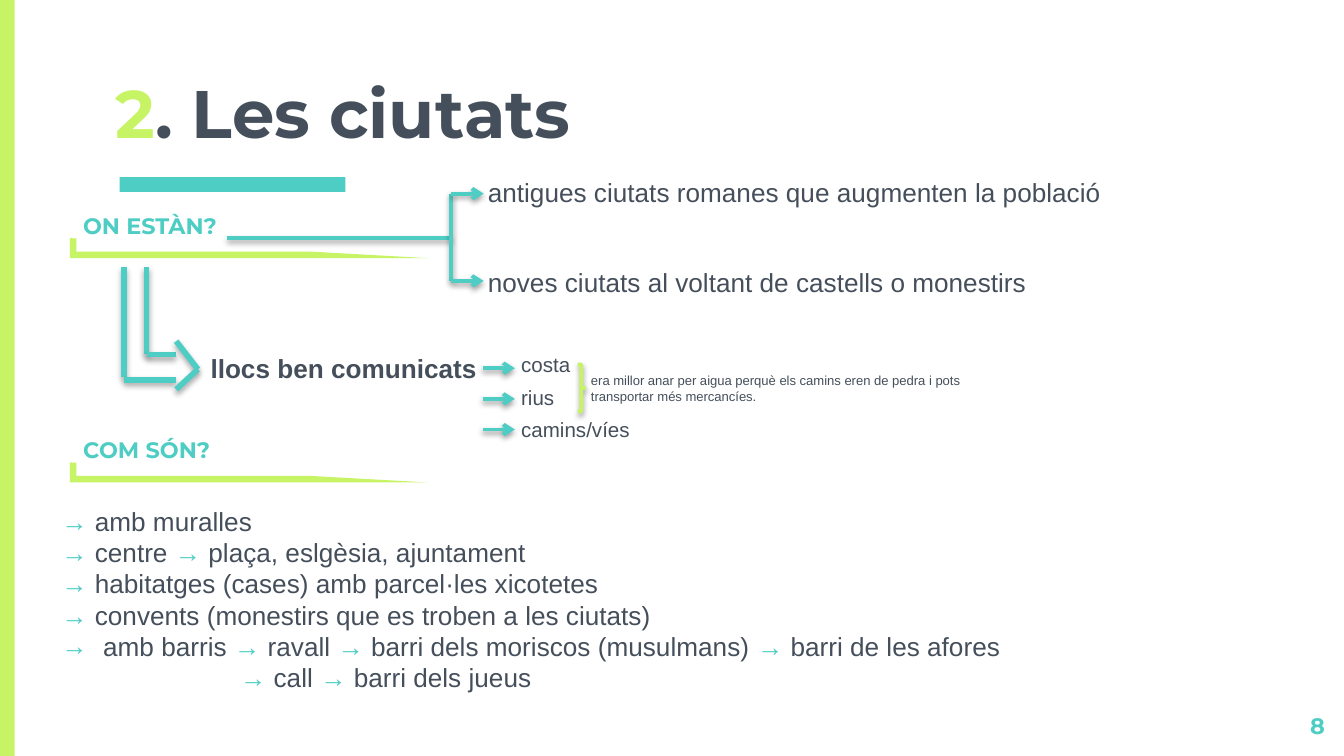
import pptx
import pptx.dml.color
import pptx.enum.shapes
import pptx.enum.text
import pptx.oxml
import pptx.oxml.ns
import pptx.util

Cm = pptx.util.Cm
Pt = pptx.util.Pt
SHAPE = pptx.enum.shapes.MSO_SHAPE
ALIGN = pptx.enum.text.PP_ALIGN
FIT = pptx.enum.text.MSO_AUTO_SIZE
LIME, TEAL, SLATE = "C7F464", "4ECDC4", "454F5B"
ARROW = "→ "


def paint(target, colour):
    """Give a fill or font colour object a solid hex colour."""
    target.rgb = pptx.dml.color.RGBColor.from_string(colour)


def add_child(parent, tag, **attributes):
    """Append a DrawingML element with its attributes."""
    child = pptx.oxml.ns.qn(f"a:{tag}")
    element = parent.makeelement(child, {name: str(value) for name, value in attributes.items()})
    parent.append(element)
    return element


def add_shadow(shape, alpha=38, distance=1.6):
    """Give a shape or connector a soft shadow straight below it."""
    properties = shape._element.spPr
    effects = properties.find(pptx.oxml.ns.qn("a:effectLst"))
    if effects is None:
        effects = add_child(properties, "effectLst")
    shadow = add_child(effects, "outerShdw", blurRad=Pt(3.1), dist=Pt(distance),
                       dir=5400000, rotWithShape=0)
    black = add_child(shadow, "srgbClr", val="000000")
    add_child(black, "alpha", val=alpha * 1000)


def style_span(span, size, colour, font="Arial", bold=False):
    """Format one run."""
    span.font.size = Pt(size)
    span.font.name = font
    span.font.bold = bold
    paint(span.font.color, colour)


def add_text(page, box, text, size, colour=SLATE, font="Arial", bold=False,
             wrap=False, inset=0.13, fit=FIT.SHAPE_TO_FIT_TEXT):
    """Place a one-paragraph text box and return its paragraph."""
    frame = page.shapes.add_textbox(*map(Cm, box)).text_frame
    frame.word_wrap = wrap
    frame.auto_size = fit
    frame.margin_top = frame.margin_bottom = Cm(inset)
    frame.text = text
    para = frame.paragraphs[0]
    style_span(para.runs[0], size, colour, font, bold)
    return para


def add_label(page, box, text):
    """Place a small bold teal label."""
    return add_text(page, box, text, 12, TEAL, "Montserrat", True, True, 0.25, FIT.NONE)


def add_shape(page, kind, box, colour):
    """Place a flat filled shape."""
    shape = page.shapes.add_shape(kind, *map(Cm, box))
    shape.shadow.inherit = False
    shape.fill.solid()
    paint(shape.fill.fore_color, colour)
    shape.line.fill.background()
    return shape


def add_line(page, start, end, width=2, head=False, **shadow):
    """Draw a teal line, with an arrowhead at its end when asked."""
    line = page.shapes.add_connector(pptx.enum.shapes.MSO_CONNECTOR.STRAIGHT,
                                     *map(Cm, start + end))
    line.line.width = Pt(width)
    paint(line.line.color, TEAL)
    if head:
        add_child(line.line._get_or_add_ln(), "tailEnd", type="arrow")
    add_shadow(line, **shadow)


def add_title(page, box):
    """Format the title and its coloured number."""
    title = page.shapes.title
    title.left, title.top, title.width, title.height = map(Cm, box)
    frame = title.text_frame
    frame.auto_size = FIT.NONE
    frame.vertical_anchor = pptx.enum.text.MSO_ANCHOR.BOTTOM
    frame.margin_top = frame.margin_bottom = Cm(0.25)
    para = frame.paragraphs[0]
    para.alignment = ALIGN.LEFT
    for text, colour in (("2", LIME), (". Les ciutats", SLATE)):
        span = para.add_run()
        span.text = text
        style_span(span, 36, colour, "Montserrat", True)


def add_heading(page, box, text):
    """Place a section heading above its tapering half frame."""
    left, top, width, height = box
    add_label(page, (left, top, 3.33, height), text).space_before = Pt(6)
    frame = add_shape(page, SHAPE.HALF_FRAME, (left, top + 0.74, width, 0.38), LIME)
    frame.rotation = 180
    frame._element.spPr.xfrm.set("flipH", "1")


def add_fork(page, box):
    """Draw the fork that leads to the two origins of the cities."""
    left, top, width, height = box
    stem, tip = left + 4.24, left + 4.85
    upper, middle, lower = top + 0.46, top + 1.3, top + 2.11
    add_line(page, (left, middle), (stem, middle))
    add_line(page, (stem, upper), (stem, lower))
    for y in (upper, lower):
        add_line(page, (stem, y), (tip, y), head=True)
    text_left = left + 4.68
    add_text(page, (text_left, top, width - 4.68, 0.86),
             "antigues ciutats romanes que augmenten la població", 14)
    add_text(page, (text_left, top + height - 0.86, 10.85, 0.86),
             "noves ciutats al voltant de castells o monestirs", 14)


def add_bent_arrow(page, box):
    """Draw the hollow arrow that turns from down to right."""
    left, top, width, height = box
    neck = 0.99
    strokes = [
        ((0, 0), (0, 2.08)), ((0.43, 0), (0.43, 1.65)),
        ((neck, 1.65), (0.43, 1.65)), ((neck, 2.13), (0, 2.13)),
        ((width, 1.93), (neck, 1.4)), ((neck, height), (width, 1.93)),
    ]
    for (x1, y1), (x2, y2) in strokes:
        add_line(page, (left + x1, top + y1), (left + x2, top + y2), 3,
                 alpha=35, distance=1.8)


def add_routes(page, box):
    """Place the well-connected places, their kinds and the note."""
    left, top, width, height = box
    add_text(page, (left, top, 5.56, 0.86), "llocs ben comunicats", 14, bold=True)
    kinds = (("costa", 1.45), ("rius", 1.14), ("camins/víes", 2.59))
    for index, (text, text_width) in enumerate(kinds):
        y = top + 0.43 + 0.58 * index
        add_line(page, (left + 5.39, y), (left + 6, y), head=True)
        add_text(page, (left + 5.87, top + 0.61 * index, text_width, 0.74), text, 11)
    brace = page.shapes.add_shape(SHAPE.RIGHT_BRACE, Cm(left + 7.19), Cm(top + 0.36),
                                  Cm(0.13), Cm(0.89))
    brace.shadow.inherit = False
    brace.fill.background()
    brace.line.width = Pt(2)
    paint(brace.line.color, LIME)
    add_shadow(brace)
    add_text(page, (left + 7.19, top + 0.38, width - 7.19, 0.86),
             "era millor anar per aigua perquè els camins eren de pedra i pots "
             "transportar més mercancíes.", 7, wrap=True)


def add_features(page, box):
    """List what the cities are like, with teal arrows."""
    lines = [
        "→ amb muralles",
        "→ centre → plaça, eslgèsia, ajuntament",
        "→ habitatges (cases) amb parcel·les xicotetes",
        "→ convents (monestirs que es troben a les ciutats)",
        "amb barris → ravall → barri dels moriscos (musulmans) → barri de les afores",
        "→ call → barri dels jueus",
    ]
    frame = page.shapes.add_textbox(*map(Cm, box)).text_frame
    frame.word_wrap = True
    frame.auto_size = FIT.SHAPE_TO_FIT_TEXT
    for index, line in enumerate(lines):
        para = frame.add_paragraph() if index else frame.paragraphs[0]
        for position, piece in enumerate(line.split(ARROW)):
            parts = ((ARROW, TEAL), (piece, SLATE)) if position else ((piece, SLATE),)
            for text, colour in parts:
                if text:
                    span = para.add_run()
                    span.text = text
                    style_span(span, 14, colour)
    bulleted, indented = frame.paragraphs[4:]
    properties = bulleted._p.get_or_add_pPr()
    properties.set("marL", str(Cm(0.79)))
    properties.set("indent", str(Cm(-0.79)))
    add_child(add_child(properties, "buClr"), "srgbClr", val=TEAL)
    add_child(properties, "buFont", typeface="Arial")
    add_child(properties, "buChar", char=ARROW.strip())
    indented._p.get_or_add_pPr().set("marL", str(Cm(3.38)))


def main():
    """Build the slide and save the deck."""
    deck = pptx.Presentation()
    deck.slide_width, deck.slide_height = Cm(25.4), Cm(14.29)
    page = deck.slides.add_slide(deck.slide_layouts[5])
    add_shape(page, SHAPE.RECTANGLE, (0, 0, 0.28, 14.29), LIME)
    add_shape(page, SHAPE.RECTANGLE, (2.26, 3.35, 4.27, 0.28), TEAL)
    add_title(page, (1.93, 0.71, 23.06, 2.41))
    add_heading(page, (1.32, 3.76, 6.78, 1.12), "ON ESTÀN?")
    add_fork(page, (4.29, 3.2, 16.82, 2.56))
    add_bent_arrow(page, (2.34, 5.05, 1.4, 2.31))
    add_routes(page, (3.73, 6.53, 15.75, 1.96))
    add_heading(page, (1.32, 8, 6.78, 1.12), "COM SÓN?")
    add_features(page, (0.91, 9.42, 19.08, 3.84))
    add_label(page, (23.77, 13.21, 1.52, 0.86), "8").alignment = ALIGN.RIGHT
    deck.save("out.pptx")


if __name__ == "__main__":
    main()
